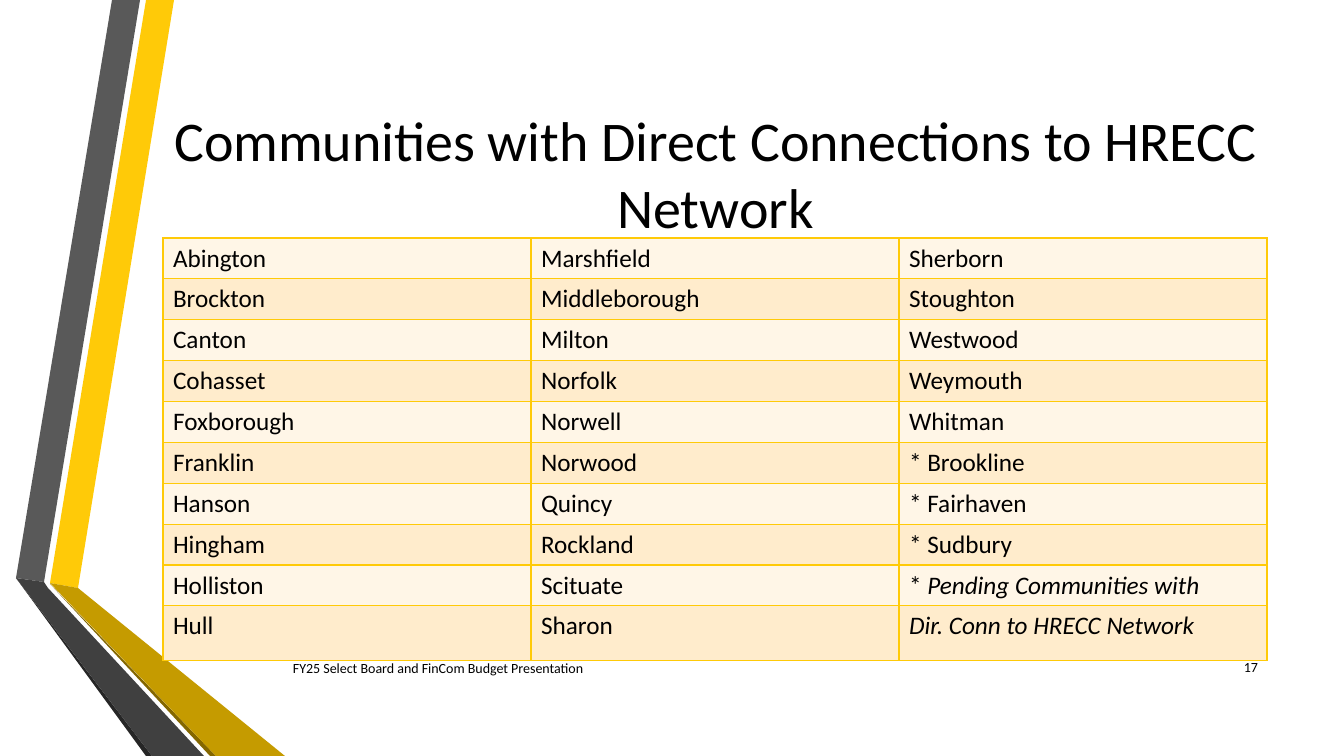
"""Build the slide listing communities with direct connections to the HRECC network."""
import pptx
import pptx.dml.color
import pptx.enum.text
import pptx.oxml
import pptx.oxml.ns
import pptx.util

SCALE = 914400 / 100.8
FONT = "Calibri"
COLORS = {
    "text": "000000",
    "gold": "FFCA08",
    "gold_mid": "C59B00",
    "gold_dark": "846700",
    "gray": "595959",
    "gray_mid": "404040",
    "gray_dark": "262626",
    "row_light": "FFF6E7",
    "row_deep": "FFECCC",
}
RIBBONS = [
    ("gold", [(50, 583), (78, 588), (174, 0), (146, 0)]),
    ("gray", [(140, 0), (112, 0), (16, 578), (44, 582)]),
    ("gray_dark", [(16, 578), (146, 756), (152, 756)]),
    ("gold_dark", [(50, 584), (210, 756), (216, 756)]),
    ("gold_mid", [(50, 583), (216, 756), (285, 756), (78, 588)]),
    ("gray_mid", [(204, 756), (48, 588), (44, 582), (16, 578), (152, 756)]),
]
TITLE = "Communities with Direct Connections to HRECC Network"
TITLE_BOX = (163, 76, 1105, 193)
FOOTERS = [
    ("FY25 Select Board and FinCom Budget Presentation", (283, 648, 781, 40), "LEFT"),
    ("17", (1208, 647, 60, 40), "RIGHT"),
]
COMMUNITIES = [
    ("Abington", "Marshfield", "Sherborn"),
    ("Brockton", "Middleborough", "Stoughton"),
    ("Canton", "Milton", "Westwood"),
    ("Cohasset", "Norfolk", "Weymouth"),
    ("Foxborough", "Norwell", "Whitman"),
    ("Franklin", "Norwood", "* Brookline"),
    ("Hanson", "Quincy", "* Fairhaven"),
    ("Hingham", "Rockland", "* Sudbury"),
    ("Holliston", "Scituate", [("* ", False), ("Pending Communities with", True)]),
    ("Hull", "Sharon", [("Dir. Conn to HRECC Network", True)]),
]
TABLE_LEFT, TABLE_TOP = 163, 238
COLUMN_WIDTH, ROW_HEIGHT, LAST_ROW_HEIGHT = 368, 37, 55


def px(length):
    return pptx.util.Emu(round(length * SCALE))


def rgb(name):
    return pptx.dml.color.RGBColor.from_string(COLORS[name])


def write(frame, spans, size, align="LEFT"):
    para = frame.paragraphs[0]
    para.alignment = getattr(pptx.enum.text.PP_ALIGN, align)
    for text, italic in spans:
        span = para.add_run()
        span.text = text
        span.font.name = FONT
        span.font.size = pptx.util.Pt(size)
        span.font.italic = italic
        span.font.color.rgb = rgb("text")


def center_vertically(frame):
    frame.word_wrap = True
    frame.auto_size = pptx.enum.text.MSO_AUTO_SIZE.NONE
    frame.vertical_anchor = pptx.enum.text.MSO_ANCHOR.MIDDLE


def add_ribbon(slide, color, points):
    builder = slide.shapes.build_freeform(*points[0], scale=SCALE)
    builder.add_line_segments(points[1:], close=True)
    ribbon = builder.convert_to_shape()
    ribbon.shadow.inherit = False
    ribbon.fill.solid()
    ribbon.fill.fore_color.rgb = rgb(color)
    ribbon.line.fill.background()


def add_title(slide):
    title = slide.shapes.title
    title.left, title.top, title.width, title.height = map(px, TITLE_BOX)
    center_vertically(title.text_frame)
    write(title.text_frame, [(TITLE, False)], 40, "CENTER")


def add_footer(slide, text, bounds, align):
    box = slide.shapes.add_textbox(*map(px, bounds))
    center_vertically(box.text_frame)
    write(box.text_frame, [(text, False)], 10, align)


def add_borders(cell):
    properties = cell._tc.get_or_add_tcPr()
    for index, side in enumerate(("lnL", "lnR", "lnT", "lnB")):
        border = pptx.oxml.parse_xml(
            f'<a:{side} {pptx.oxml.ns.nsdecls("a")} w="12700"><a:solidFill>'
            f'<a:srgbClr val="{COLORS["gold"]}"/></a:solidFill></a:{side}>'
        )
        properties.insert(index, border)


def add_communities(slide):
    heights = [ROW_HEIGHT] * (len(COMMUNITIES) - 1) + [LAST_ROW_HEIGHT]
    columns = len(COMMUNITIES[0])
    bounds = (TABLE_LEFT, TABLE_TOP, COLUMN_WIDTH * columns, sum(heights))
    table = slide.shapes.add_table(len(COMMUNITIES), columns, *map(px, bounds)).table
    table.first_row = False
    for column in table.columns:
        column.width = px(COLUMN_WIDTH)
    for index, names in enumerate(COMMUNITIES):
        table.rows[index].height = px(heights[index])
        for position, name in enumerate(names):
            cell = table.cell(index, position)
            cell.fill.solid()
            cell.fill.fore_color.rgb = rgb("row_deep" if index % 2 else "row_light")
            add_borders(cell)
            spans = [(name, False)] if isinstance(name, str) else name
            write(cell.text_frame, spans, 18)


def main():
    deck = pptx.Presentation()
    deck.slide_width, deck.slide_height = px(1344), px(756)
    slide = deck.slides.add_slide(deck.slide_layouts[5])
    for color, points in RIBBONS:
        add_ribbon(slide, color, points)
    add_title(slide)
    for footer in FOOTERS:
        add_footer(slide, *footer)
    add_communities(slide)
    deck.save("out.pptx")


if __name__ == "__main__":
    main()
